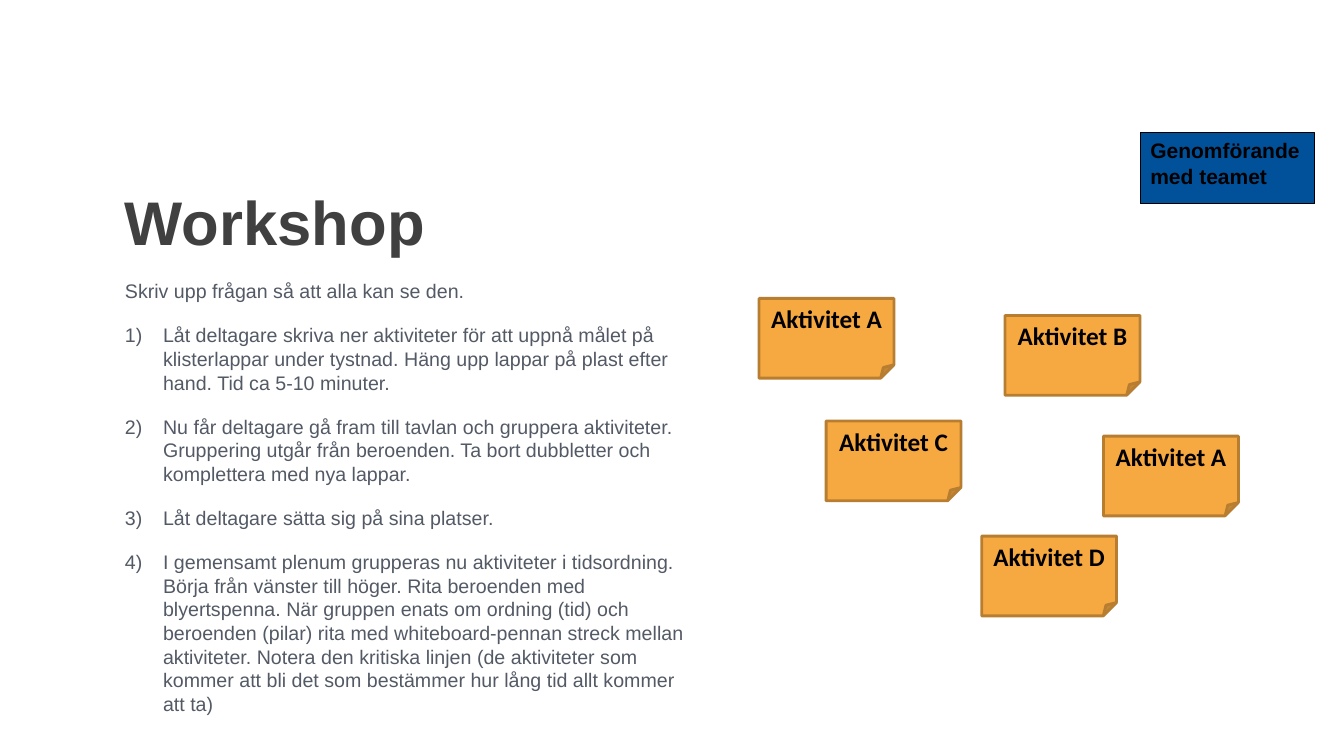
from lxml.etree import SubElement
from pptx import Presentation
from pptx.dml.color import RGBColor
from pptx.enum.shapes import MSO_SHAPE
from pptx.enum.text import MSO_ANCHOR, PP_ALIGN
from pptx.oxml.ns import qn
from pptx.util import Cm, Pt

TITLE = "Workshop"
INTRODUCTION = "Skriv upp frågan så att alla kan se den."
STEPS = [
    "Låt deltagare skriva ner aktiviteter för att uppnå målet på klisterlappar under "
    "tystnad. Häng upp lappar på plast efter hand. Tid ca 5-10 minuter.",
    "Nu får deltagare gå fram till tavlan och gruppera aktiviteter. Gruppering utgår från "
    "beroenden. Ta bort dubbletter och komplettera med nya lappar.",
    "Låt deltagare sätta sig på sina platser.",
    "I gemensamt plenum grupperas nu aktiviteter i tidsordning. Börja från vänster till "
    "höger. Rita beroenden med blyertspenna. När gruppen enats om ordning (tid) och "
    "beroenden (pilar) rita med whiteboard-pennan streck mellan aktiviteter. Notera den "
    "kritiska linjen (de aktiviteter som kommer att bli det som bestämmer hur lång tid "
    "allt kommer att ta)",
]
LABEL = "Genomförande med teamet"
# Text, left and top in centimetres
NOTES = [
    ("Aktivitet A", 19.13, 7.52),
    ("Aktivitet B", 25.33, 7.95),
    ("Aktivitet C", 20.82, 10.61),
    ("Aktivitet A", 27.81, 10.99),
    ("Aktivitet D", 24.74, 13.51),
]
NOTE_WIDTH, NOTE_HEIGHT = 3.4, 2.01
TEXT_LEFT = 2.9
STEP_INDENT = 0.96


def color(hex_string):
    return RGBColor.from_string(hex_string)


def write(paragraph, text, size, text_color, font="Arial", bold=False,
          align=PP_ALIGN.LEFT):
    paragraph.text = text
    paragraph.alignment = align
    paragraph.font.size = Pt(size)
    paragraph.font.name = font
    paragraph.font.bold = bold
    paragraph.font.color.rgb = color(text_color)


def number(paragraph):
    """Give the paragraph an automatic 1) number with a hanging indent."""
    properties = paragraph._p.get_or_add_pPr()
    properties.set("marL", str(Cm(STEP_INDENT)))
    properties.set("indent", str(-Cm(STEP_INDENT)))
    SubElement(properties, qn("a:buFont")).set("typeface", "+mj-lt")
    SubElement(properties, qn("a:buAutoNum")).set("type", "arabicParenR")


def add_text_frame(slide, left, top, width, height, anchor=MSO_ANCHOR.TOP):
    box = slide.shapes.add_textbox(Cm(left), Cm(top), Cm(width), Cm(height))
    box.text_frame.word_wrap = True
    box.text_frame.vertical_anchor = anchor
    return box.text_frame


def add_card(slide, kind, left, top, width, height, fill, line, line_width, text,
             **text_format):
    shape = slide.shapes.add_shape(kind, Cm(left), Cm(top), Cm(width), Cm(height))
    shape.shadow.inherit = False
    shape.fill.solid()
    shape.fill.fore_color.rgb = color(fill)
    shape.line.color.rgb = color(line)
    shape.line.width = Pt(line_width)
    shape.text_frame.word_wrap = True
    shape.text_frame.vertical_anchor = MSO_ANCHOR.TOP
    write(shape.text_frame.paragraphs[0], text, text_color="000000", bold=True,
          **text_format)


def add_instructions(slide):
    frame = add_text_frame(slide, TEXT_LEFT, 6.91, 14.83, 11.43)
    for index, text in enumerate([INTRODUCTION, *STEPS]):
        paragraph = frame.add_paragraph() if index else frame.paragraphs[0]
        paragraph.space_after = Pt(12)
        if index:
            paragraph.space_before = Pt(2.8)
            number(paragraph)
        write(paragraph, text, 14, "535A65")


def main():
    presentation = Presentation()
    presentation.slide_width, presentation.slide_height = Cm(33.87), Cm(19.05)
    slide = presentation.slides.add_slide(presentation.slide_layouts[6])

    title_frame = add_text_frame(slide, TEXT_LEFT, 4.45, 21.82, 2.21, MSO_ANCHOR.MIDDLE)
    write(title_frame.paragraphs[0], TITLE, 44, "404040", bold=True)
    add_instructions(slide)
    add_card(slide, MSO_SHAPE.RECTANGLE, 28.74, 3.35, 4.39, 1.79,
             "005199", "000000", 0.75, LABEL, size=15)
    for text, left, top in NOTES:
        add_card(slide, MSO_SHAPE.FOLDED_CORNER, left, top, NOTE_WIDTH, NOTE_HEIGHT,
                 "F7A941", "B77D30", 2, text, size=18, font="Calibri",
                 align=PP_ALIGN.CENTER)
    presentation.save("out.pptx")


if __name__ == "__main__":
    main()
